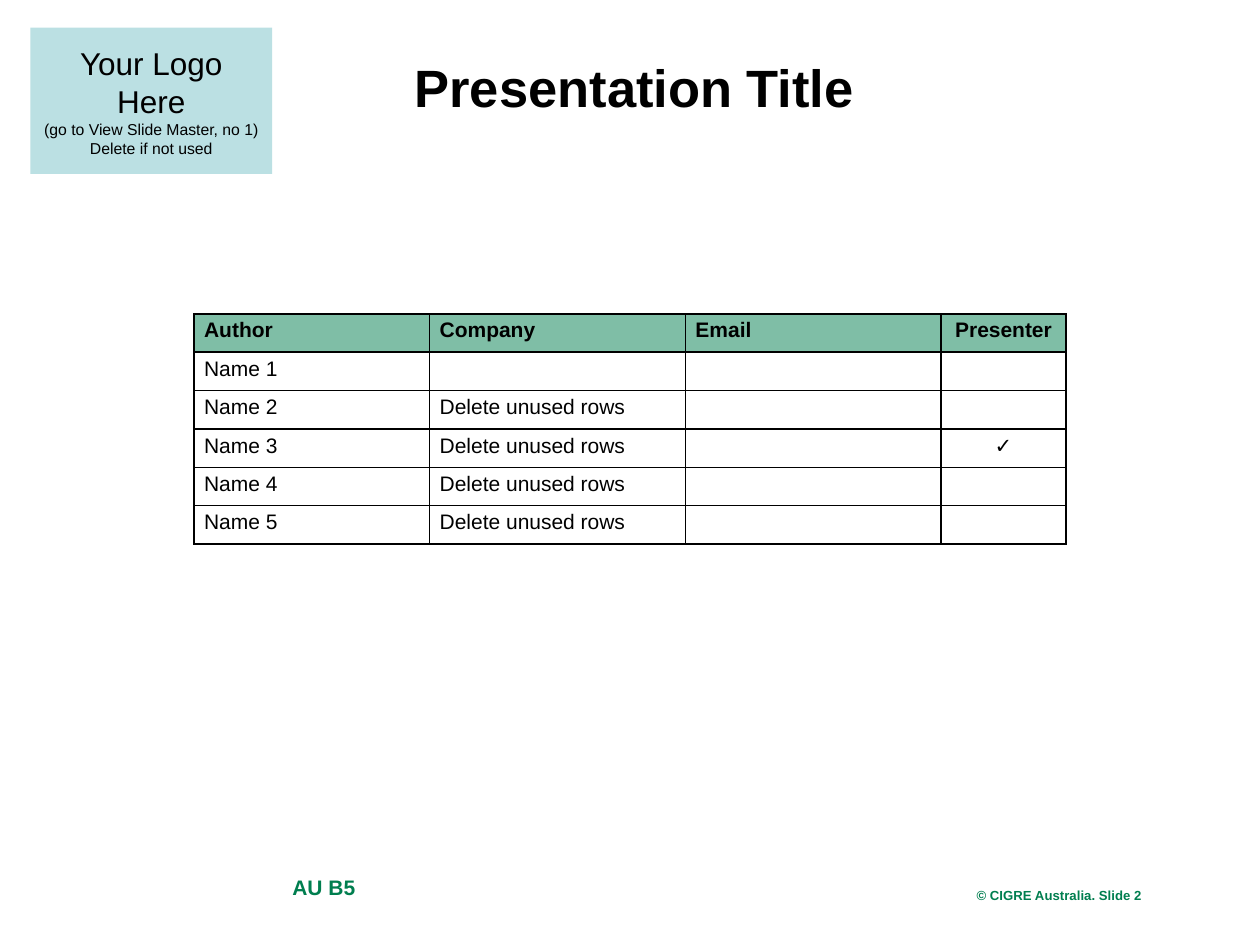
from lxml import etree
from pptx import Presentation
from pptx.dml.color import RGBColor
from pptx.enum.shapes import MSO_SHAPE as Shape
from pptx.enum.text import MSO_ANCHOR as Anchor, PP_ALIGN as Align
from pptx.oxml.ns import qn
from pptx.util import Inches, Pt

FONT = "Arial"
BLACK = RGBColor(0x00, 0x00, 0x00)
WHITE = RGBColor(0xFF, 0xFF, 0xFF)
GREEN = RGBColor(0x00, 0x7E, 0x4F)
PALE_BLUE = RGBColor(0xBB, 0xE0, 0xE3)

COLUMN_WIDTHS = (1.87, 2.03, 2.03, 0.99)
PRESENTER_COLUMN = 3
UNUSED = "Delete unused rows"
AUTHOR_ROWS = (
    ("Author", "Company", "Email", "Presenter"),
    ("Name 1", "", "", ""),
    ("Name 2", UNUSED, "", ""),
    ("Name 3", UNUSED, "", "✓"),
    ("Name 4", UNUSED, "", ""),
    ("Name 5", UNUSED, "", ""),
)


def style_paragraph(para, size, color=BLACK, bold=False, align=Align.LEFT):
    para.alignment = align
    for span in para.runs:
        span.font.name = FONT
        span.font.size = Pt(size)
        span.font.bold = bold
        span.font.color.rgb = color


def add_text_box(page, left, top, width, height):
    return page.shapes.add_textbox(Inches(left), Inches(top), Inches(width), Inches(height))


def add_panel(page, color, left, top, width, height):
    """Add a plain filled rectangle without outline or shadow."""
    box = page.shapes.add_shape(
        Shape.RECTANGLE, Inches(left), Inches(top), Inches(width), Inches(height))
    box.shadow.inherit = False
    box.fill.solid()
    box.fill.fore_color.rgb = color
    box.line.fill.background()
    return box


def add_title(page, left, top, width, height):
    frame = add_text_box(page, left, top, width, height).text_frame
    frame.word_wrap = True
    frame.vertical_anchor = Anchor.MIDDLE
    frame.text = "Presentation Title"
    style_paragraph(frame.paragraphs[0], 30, bold=True, align=Align.CENTER)


def add_logo_placeholder(page, left, top, width, height):
    frame = add_panel(page, PALE_BLUE, left, top, width, height).text_frame
    frame.word_wrap = True
    frame.vertical_anchor = Anchor.MIDDLE
    frame.text = "Your Logo Here\n(go to View Slide Master, no 1)\nDelete if not used"
    for para, size in zip(frame.paragraphs, (18, 9, 9)):
        style_paragraph(para, size, align=Align.CENTER)


def write_footer(box, text, size):
    frame = box.text_frame
    frame.margin_left = frame.margin_right = frame.margin_top = frame.margin_bottom = 0
    frame.word_wrap = True
    frame.vertical_anchor = Anchor.BOTTOM
    frame.text = text
    style_paragraph(frame.paragraphs[0], size, GREEN, bold=True)


def add_borders(cell):
    properties = cell._tc.get_or_add_tcPr()
    for side in ("a:lnL", "a:lnR", "a:lnT", "a:lnB"):
        line = etree.SubElement(properties, qn(side), w=str(Pt(1)))
        fill = etree.SubElement(line, qn("a:solidFill"))
        etree.SubElement(fill, qn("a:srgbClr"), val=str(BLACK))


def fill_cell(cell, is_header):
    """Tint a header cell with half-transparent green and leave others clear."""
    if not is_header:
        cell.fill.background()
        return
    cell.fill.solid()
    cell.fill.fore_color.rgb = GREEN
    color = cell._tc.tcPr.find(qn("a:solidFill")).find(qn("a:srgbClr"))
    etree.SubElement(color, qn("a:alpha"), val="50000")


def write_cell(cell, text, is_header, align):
    cell.margin_left = cell.margin_right = Inches(0.08)
    cell.margin_top = cell.margin_bottom = Inches(0.04)
    cell.text = text
    para = cell.text_frame.paragraphs[0]
    style_paragraph(para, 12, bold=is_header, align=align)
    if not text:
        # An empty cell needs its own text size, or its row grows.
        etree.SubElement(para._p, qn("a:endParaRPr"), sz="1200")


def add_author_table(page, left, top, width, height):
    table = page.shapes.add_table(
        len(AUTHOR_ROWS), len(COLUMN_WIDTHS),
        Inches(left), Inches(top), Inches(width), Inches(height)).table
    table.horz_banding = False
    for column, share in zip(table.columns, COLUMN_WIDTHS):
        column.width = Inches(width * share / sum(COLUMN_WIDTHS))
    for row_index, texts in enumerate(AUTHOR_ROWS):
        is_header = row_index == 0
        for column_index, text in enumerate(texts):
            cell = table.cell(row_index, column_index)
            align = Align.CENTER if column_index == PRESENTER_COLUMN else Align.LEFT
            write_cell(cell, text, is_header, align)
            add_borders(cell)
            fill_cell(cell, is_header)


def main():
    deck = Presentation()
    deck.slide_width, deck.slide_height = Inches(10), Inches(7.5)
    page = deck.slides.add_slide(deck.slide_layouts[6])
    page.background.fill.solid()
    page.background.fill.fore_color.rgb = WHITE

    copyright_box = add_panel(page, WHITE, 7.75, 6.92, 1.78, 0.25)
    write_footer(copyright_box, "© CIGRE Australia. Slide", 7.5)
    add_logo_placeholder(page, 0.24, 0.22, 1.92, 1.16)
    group_box = add_panel(page, WHITE, 2.32, 6.89, 1.78, 0.25)
    write_footer(group_box, "AU B5", 12)
    add_title(page, 2.32, 0.21, 5.43, 0.96)
    number_box = add_text_box(page, 9, 7.04, 0.19, 0.13)
    write_footer(number_box, "2", 7.5)
    add_author_table(page, 1.54, 2.49, 6.92, 1.83)

    deck.save("out.pptx")


if __name__ == "__main__":
    main()
